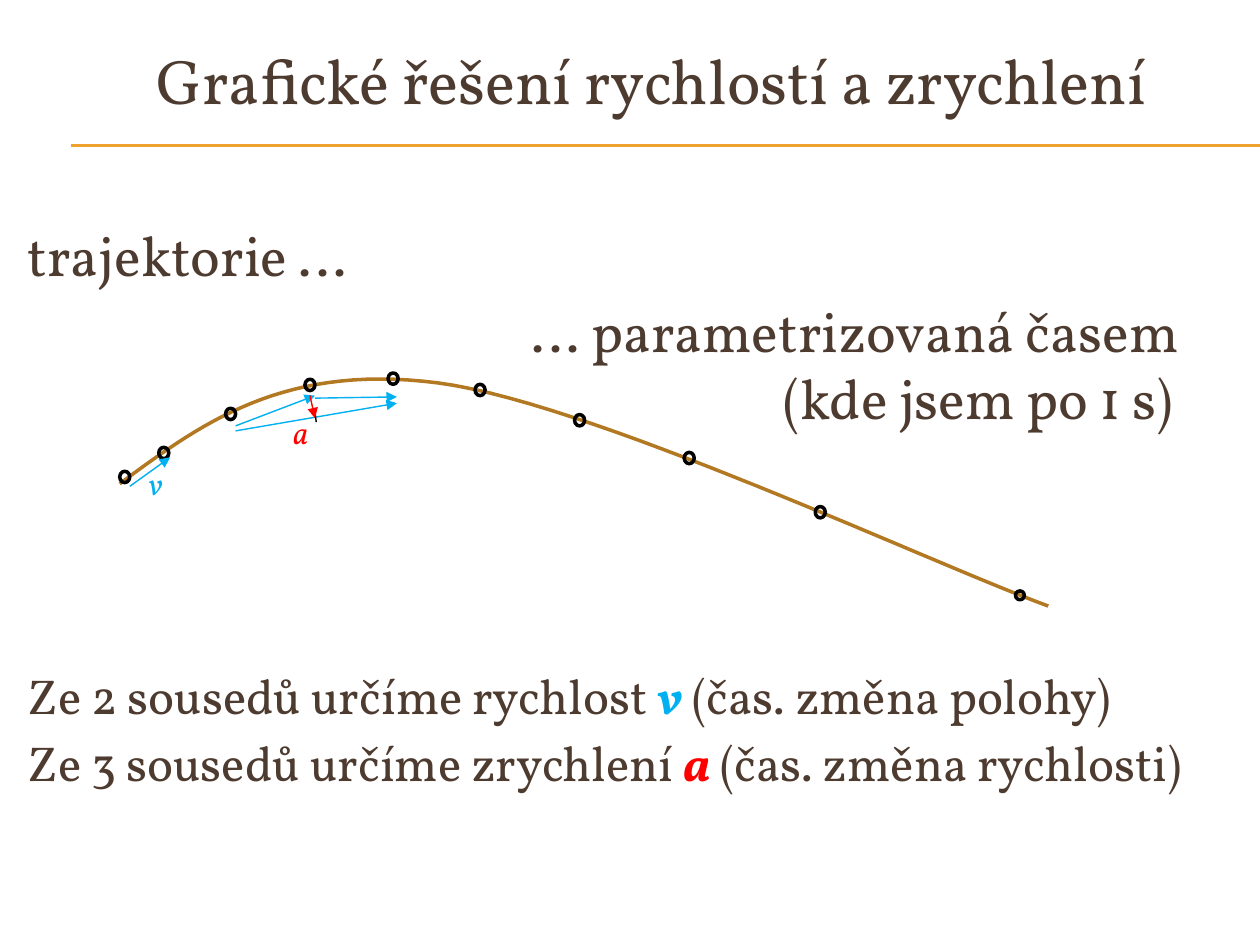
from lxml.etree import SubElement
from pptx import Presentation
from pptx.dml.color import RGBColor
from pptx.enum.shapes import MSO_CONNECTOR, MSO_SHAPE
from pptx.enum.text import MSO_ANCHOR, MSO_AUTO_SIZE, PP_ALIGN
from pptx.oxml.ns import qn
from pptx.util import Inches, Pt

BROWN = RGBColor(0x4E, 0x3B, 0x30)
ORANGE = RGBColor(0xF0, 0xA2, 0x2E)
OCHRE = RGBColor(0xB2, 0x78, 0x22)
BLUE = RGBColor(0x00, 0xB0, 0xF0)
RED = RGBColor(0xFF, 0x00, 0x00)
BLACK = RGBColor(0x00, 0x00, 0x00)

CURVE = [
    [(0.95, 3.84), (1.6, 3.36), (2.25, 2.88), (3.48, 3.04)],
    [(3.48, 3.04), (4.7, 3.2), (7.41, 4.48), (8.32, 4.81)],
]
CURVE_STEPS = 30
POSITIONS = [(0.95, 3.74), (1.26, 3.55), (1.79, 3.24), (2.42, 3.01), (3.08, 2.96),
             (3.77, 3.05), (4.56, 3.29), (5.43, 3.59), (6.47, 4.02)]
VELOCITIES = [((1.03, 3.86), (1.35, 3.63)), ((1.87, 3.38), (2.5, 3.14)),
              ((2.5, 3.16), (3.15, 3.15)), ((1.87, 3.42), (3.15, 3.2))]
BODY = [
    (32, 0, 0, [("trajektorie …", None)]),
    (32, 4, 5, [("… parametrizovaná časem", None)]),
    (32, 6, 0, [("(kde jsem po 1 s)", None)]),
    (28, 0, 134, [("Ze 2 sousedů určíme rychlost ", None), ("v", BLUE),
                  (" (čas. změna polohy)", None)]),
    (28, 0, 5, [("Ze 3 sousedů určíme zrychlení ", None), ("a", RED),
                (" (čas. změna rychlosti)", None)]),
]


def bezier_point(controls, fraction):
    weights = [(1 - fraction) ** 3, 3 * fraction * (1 - fraction) ** 2,
               3 * fraction ** 2 * (1 - fraction), fraction ** 3]
    return tuple(Inches(sum(weight * control[axis] for weight, control in zip(weights, controls)))
                 for axis in (0, 1))


class SlideWriter:
    """Holds the style and the current slide and draws each kind of element."""

    def __init__(self, slide, font_name="Vollkorn", text_color=BROWN):
        self.slide = slide
        self.font_name = font_name
        self.text_color = text_color

    def style(self, paragraph, size, color=None):
        paragraph.font.name = self.font_name
        paragraph.font.size = Pt(size)
        paragraph.font.color.rgb = color or self.text_color

    def place(self, shape, left, top, width, height):
        shape.left, shape.top = Inches(left), Inches(top)
        shape.width, shape.height = Inches(width), Inches(height)

    def title(self, text, *bounds):
        title = self.slide.shapes.title
        self.place(title, *bounds)
        title.text_frame.vertical_anchor = MSO_ANCHOR.MIDDLE
        paragraph = title.text_frame.paragraphs[0]
        paragraph.text = text
        paragraph.alignment = PP_ALIGN.LEFT
        self.style(paragraph, 36)

    def body(self, lines, *bounds):
        body = self.slide.placeholders[1]
        self.place(body, *bounds)
        frame = body.text_frame
        frame.auto_size = MSO_AUTO_SIZE.NONE
        for index, (size, indent, space, spans) in enumerate(lines):
            paragraph = frame.add_paragraph() if index else frame.paragraphs[0]
            properties = paragraph._p.get_or_add_pPr()
            properties.set("marL", str(Inches(indent)))
            properties.set("indent", "0")
            SubElement(properties, qn("a:buNone"))
            paragraph.space_before = Pt(space)
            self.style(paragraph, size)
            for text, accent in spans:
                span = paragraph.add_run()
                span.text = text
                if accent:
                    span.font.bold = span.font.italic = True
                    span.font.color.rgb = accent

    def line(self, start, end, color, width=0.79, arrow=False):
        connector = self.slide.shapes.add_connector(
            MSO_CONNECTOR.STRAIGHT, *map(Inches, start + end))
        connector.line.color.rgb = color
        connector.line.width = Pt(width)
        if arrow:
            SubElement(connector.line._get_or_add_ln(), qn("a:tailEnd"), type="triangle")
        SubElement(connector._element.spPr, qn("a:effectLst"))

    def outline(self, shape, color):
        shape.shadow.inherit = False
        shape.fill.background()
        shape.line.color.rgb = color
        shape.line.width = Pt(2)

    def curve(self, segments, color):
        points = [bezier_point(controls, step / CURVE_STEPS)
                  for controls in segments for step in range(1, CURVE_STEPS + 1)]
        builder = self.slide.shapes.build_freeform(*map(Inches, segments[0][0]))
        builder.add_line_segments(points, close=False)
        self.outline(builder.convert_to_shape(), color)

    def ring(self, left, top, width=0.08, height=0.09):
        ring = self.slide.shapes.add_shape(
            MSO_SHAPE.OVAL, *map(Inches, (left, top, width, height)))
        self.outline(ring, BLACK)

    def label(self, text, color, *bounds):
        box = self.slide.shapes.add_textbox(*map(Inches, bounds))
        box.text_frame.auto_size = MSO_AUTO_SIZE.SHAPE_TO_FIT_TEXT
        paragraph = box.text_frame.paragraphs[0]
        paragraph.text = text
        self.style(paragraph, 18, color)
        paragraph.font.italic = True


def main():
    deck = Presentation()
    deck.slide_width, deck.slide_height = Inches(10), Inches(7.5)
    writer = SlideWriter(deck.slides.add_slide(deck.slide_layouts[1]))
    writer.title("Grafické řešení rychlostí a zrychlení", 1.14, 0.17, 8.59, 0.92)
    writer.body(BODY, 0.12, 1.7, 9.88, 4.95)
    for height in (1.15, 1.16):
        writer.line((0.56, height), (10, height), ORANGE, 0.75)
    writer.curve(CURVE, OCHRE)
    writer.ring(8.06, 4.69, 0.07, 0.07)
    for left, top in POSITIONS:
        writer.ring(left, top)
    for start, end in VELOCITIES:
        writer.line(start, end, BLUE, arrow=True)
    writer.line((2.5, 3.27), (2.51, 3.35), BLACK)
    writer.line((2.46, 3.14), (2.5, 3.32), RED, arrow=True)
    writer.label("v", BLUE, 1.08, 3.63, 0.3, 0.4)
    writer.label("a", RED, 2.23, 3.23, 0.25, 0.4)
    deck.save("out.pptx")


if __name__ == "__main__":
    main()
